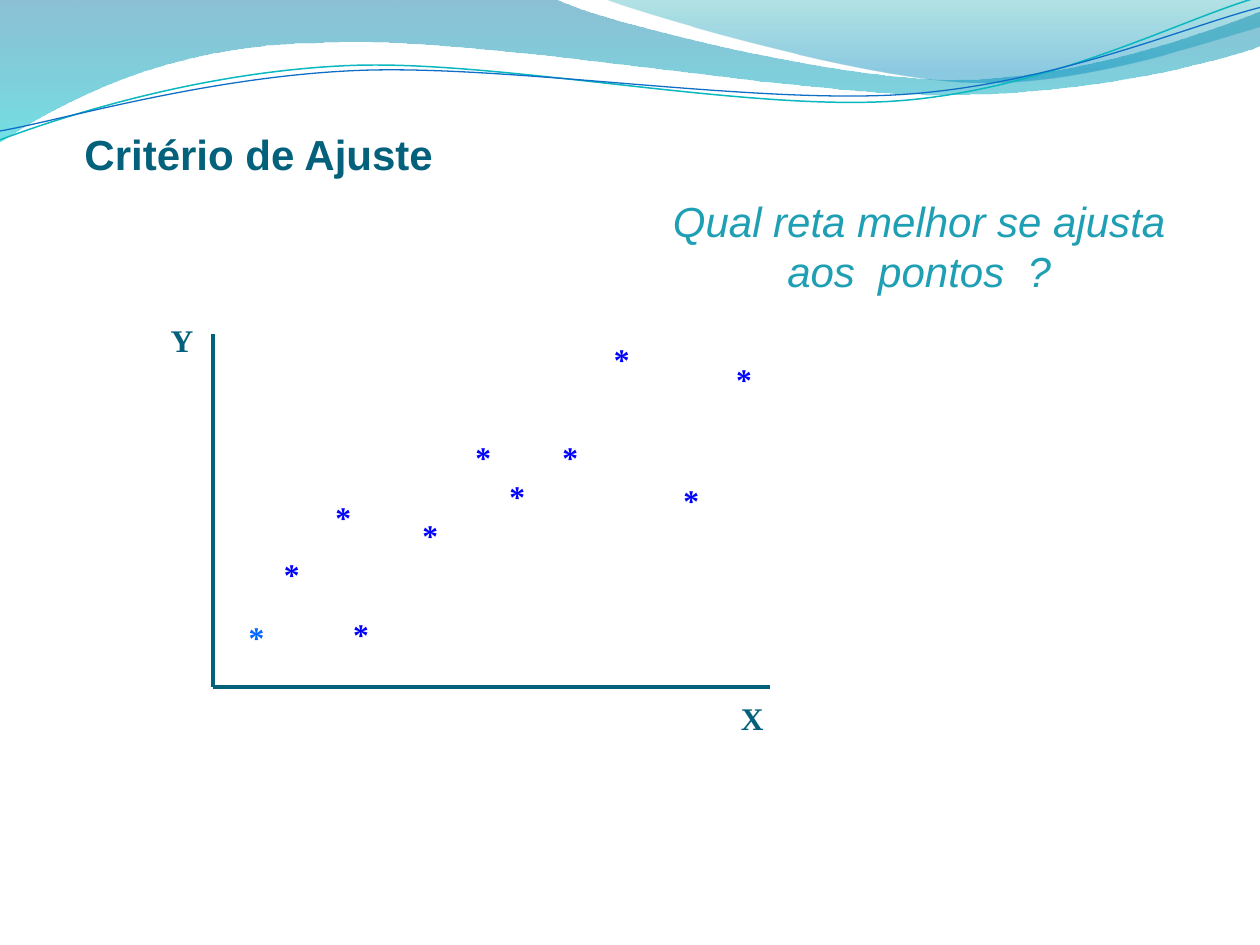
import math

from lxml import etree
from pptx import Presentation
from pptx.dml.color import RGBColor
from pptx.enum import shapes, text
from pptx.oxml import ns
from pptx.util import Inches, Pt

DARK_TEAL = RGBColor(0x04, 0x61, 0x7B)
TEAL = RGBColor(0x1E, 0x9F, 0xB4)
BLUE = RGBColor(0x00, 0x00, 0xFF)
LIGHT_BLUE = RGBColor(0x00, 0x66, 0xFF)
WAVE_TOP = RGBColor(0x00, 0x74, 0xA1)
WAVE_BOTTOM = RGBColor(0x00, 0xC6, 0xCF)
CREST_TOP = RGBColor(0x00, 0xA1, 0xA9)
CREST_BOTTOM = RGBColor(0x00, 0x8B, 0xBF)
LINE_TEAL = RGBColor(0x0A, 0xB8, 0xBF)
LINE_BLUE = RGBColor(0x0F, 0x6F, 0xC6)

TILT = 2.7
MARK_WIDTH, MARK_HEIGHT = 0.69, 0.4
ORIGIN = (1.69, 5.45)

WAVE = [
    [(0, -0.01)], [(4.4, -0.01)],
    [(4.76, 0.17), (6.64, 0.63), (7.58, 0.63)],
    [(8.53, 0.63), (9.58, 0.26), (10, 0.09)],
    [(10.01, 0.36)],
    [(9.83, 0.44), (8.7, 0.76), (7.46, 0.75)],
    [(6.22, 0.75), (3.82, 0.28), (2.57, 0.34)],
    [(1.29, 0.35), (0.46, 0.83), (-0.01, 1.13)],
    [(0, -0.01)],
]
CREST = [
    [(4.79, -0.01)],
    [(5.09, 0.11), (6.82, 0.62), (7.69, 0.65)],
    [(8.56, 0.69), (9.61, 0.32), (10, 0.21)],
    [(10, 0)], [(4.79, -0.01)],
]
TEAL_CURVE = [
    [(0, 1.11)],
    [(0.48, 0.93), (1.58, 0.57), (2.77, 0.52)],
    [(3.95, 0.47), (5.93, 0.89), (7.13, 0.8)],
    [(8.33, 0.71), (9.38, 0.15), (9.98, -0.02)],
]
BLUE_CURVE = [
    [(0, 1.04)],
    [(0.47, 0.96), (1.64, 0.61), (2.83, 0.56)],
    [(4.03, 0.51), (5.97, 0.83), (7.17, 0.75)],
    [(8.36, 0.67), (9.41, 0.21), (10, 0.06)],
]
MARKS = [
    (1.97, 4.36), (2.38, 3.9), (3.07, 4.05), (2.52, 4.83), (3.49, 3.43),
    (4.59, 2.65), (5.56, 2.81), (5.14, 3.77), (4.18, 3.43), (3.76, 3.74),
]


def add_outline(slide, segments, close):
    """Add a freeform in which each three-point segment is a Bézier curve."""
    points = [(Inches(x), Inches(y)) for segment in segments for x, y in segment]
    builder = slide.shapes.build_freeform(*points[0])
    builder.add_line_segments(points[1:], close=close)
    shape = builder.convert_to_shape()
    shape.shadow.inherit = False
    lines = iter(list(shape._element.spPr.iter(ns.qn("a:lnTo"))))
    for segment in segments[1:]:
        steps = [next(lines) for point in segment]
        if len(steps) == 3:
            curve = etree.Element(ns.qn("a:cubicBezTo"))
            steps[0].addprevious(curve)
            for step in steps:
                curve.append(step[0])
                step.getparent().remove(step)
    return shape


def add_wave(slide, segments, stops):
    """Add a wave with a translucent downward gradient."""
    shape = add_outline(slide, segments, True)
    shape.line.fill.background()
    shape.fill.gradient()
    shape.fill.gradient_angle = 270
    for stop, (position, color, opacity) in zip(shape.fill.gradient_stops, stops):
        stop.position = position
        stop.color.rgb = color
    for element, (position, color, opacity) in zip(
            shape._element.spPr.iter(ns.qn("a:srgbClr")), stops):
        etree.SubElement(element, ns.qn("a:alpha"), val=str(opacity * 1000))


def turn(point, center):
    """Turn a point clockwise about the center by the tilt."""
    x, y = point[0] - center[0], point[1] - center[1]
    cosine, sine = math.cos(math.radians(TILT)), math.sin(math.radians(TILT))
    return center[0] + x * cosine - y * sine, center[1] + x * sine + y * cosine


def add_curve(slide, segments, center, color, width):
    """Add an open, unfilled curve that is tilted about its center."""
    level = [[turn(point, center) for point in segment] for segment in segments]
    shape = add_outline(slide, level, False)
    shape.rotation = 360 - TILT
    shape.fill.background()
    shape.line.color.rgb = color
    shape.line.width = Pt(width)


def add_axis(slide, start, end):
    """Add a straight axis line."""
    line = slide.shapes.add_connector(
        shapes.MSO_CONNECTOR.STRAIGHT, *[Inches(value) for value in start + end])
    line.line.color.rgb = DARK_TEAL
    line.line.width = Pt(2.25)
    etree.SubElement(line._element.spPr, ns.qn("a:effectLst"))


def add_run(paragraph, words, size, font, color, bold=False, italic=False):
    """Add a formatted run to the paragraph."""
    run = paragraph.add_run()
    run.text = words
    run.font.size = Pt(size)
    run.font.name = font
    run.font.color.rgb = color
    run.font.bold = bold
    run.font.italic = italic


def add_label(slide, box, words, color, size=18, font="Times New Roman",
              bold=True, italic=False, wrap=True):
    """Add a centred text box."""
    shape = slide.shapes.add_textbox(*[Inches(value) for value in box])
    shape.text_frame.word_wrap = wrap
    shape.text_frame.auto_size = text.MSO_AUTO_SIZE.SHAPE_TO_FIT_TEXT
    paragraph = shape.text_frame.paragraphs[0]
    paragraph.alignment = text.PP_ALIGN.CENTER
    add_run(paragraph, words, size, font, color, bold, italic)


def set_title(slide, words):
    """Place and format the title above the waves."""
    title = slide.shapes.title
    slide.shapes._spTree.append(title._element)
    title.left, title.top = Inches(0.67), Inches(0.17)
    title.width, title.height = Inches(8.5), Inches(1.25)
    frame = title.text_frame
    frame.auto_size = text.MSO_AUTO_SIZE.NONE
    frame.vertical_anchor = text.MSO_ANCHOR.BOTTOM
    frame.margin_left = frame.margin_right = frame.margin_bottom = 0
    frame.margin_top = Inches(0.05)
    paragraph = frame.paragraphs[0]
    paragraph.alignment = text.PP_ALIGN.LEFT
    add_run(paragraph, words, 24, "Arial", DARK_TEAL, bold=True)


def main():
    """Build the slide and save it."""
    presentation = Presentation()
    presentation.slide_width, presentation.slide_height = Inches(10), Inches(7.5)
    slide = presentation.slides.add_slide(presentation.slide_layouts[5])

    add_wave(slide, WAVE, [(0, WAVE_TOP, 45), (1, WAVE_BOTTOM, 55)])
    add_wave(slide, CREST, [(0, CREST_TOP, 30), (0.8, CREST_BOTTOM, 45)])
    add_curve(slide, TEAL_CURVE, (4.99, 0.58), LINE_TEAL, 0.85)
    add_curve(slide, BLUE_CURVE, (5, 0.59), LINE_BLUE, 0.75)
    set_title(slide, "Critério de Ajuste")

    add_axis(slide, (ORIGIN[0], 2.65), ORIGIN)
    add_axis(slide, ORIGIN, (6.11, ORIGIN[1]))
    add_label(slide, (5.78, 5.5, 0.38, 0.4), "X", DARK_TEAL, wrap=False)
    add_label(slide, (0.89, 2.5, 1.11, 0.4), "Y", DARK_TEAL)

    add_label(slide, (1.69, 4.86, MARK_WIDTH, MARK_HEIGHT), "*", LIGHT_BLUE)
    for left, top in MARKS:
        add_label(slide, (left, top, MARK_WIDTH, MARK_HEIGHT), "*", BLUE)
    add_label(slide, (5.17, 1.5, 4.25, 0.91), "Qual reta melhor se ajusta aos  pontos  ?",
              TEAL, size=24, font="Arial", bold=False, italic=True)

    presentation.save("out.pptx")


if __name__ == "__main__":
    main()
